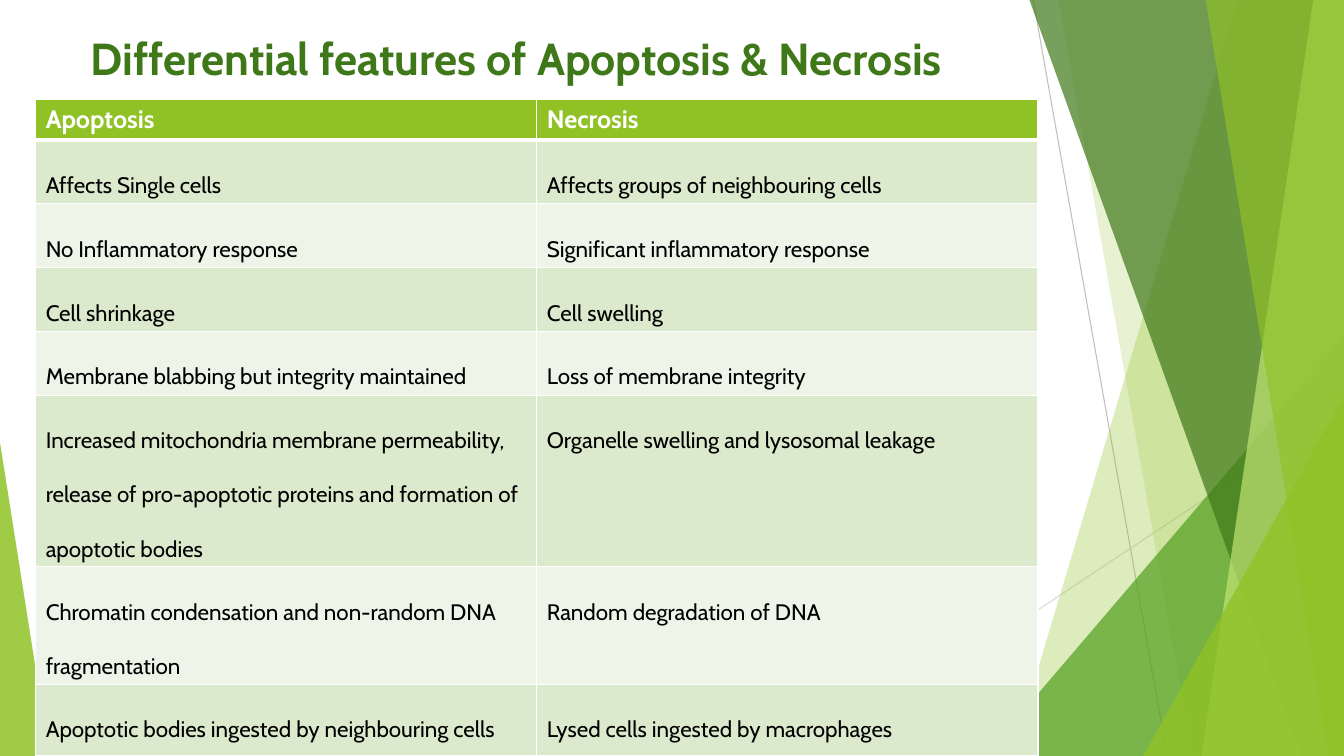
from dataclasses import dataclass

from lxml import etree
from pptx import Presentation
from pptx import util as u
from pptx.dml import color
from pptx.enum import shapes, text
from pptx.oxml import ns

FONT = "Cabin"
WIDTH, HEIGHT = u.Pt(960), u.Pt(540)
BLEED = u.Pt(-0.72)
COLORS = {
    "lime": "90C226",
    "green": "54A021",
    "forest": "3F7819",
    "pale": "C0E474",
    "white": "FFFFFF",
    "black": "000000",
    "band_dark": "DBE9CD",
    "band_light": "EEF4E8",
    "grey": "BFBFBF",
    "light_grey": "D9D9D9",
}


@dataclass
class Ray:
    """A thin straight line, in points."""
    start: tuple[float, float]
    end: tuple[float, float]
    color: str


@dataclass
class Facet:
    """A full-height pane from a slanted left edge to the right of the slide."""
    top_x: float
    bottom_x: float
    color: str
    opacity: int


@dataclass
class Wedge:
    """A triangle standing on the bottom edge of the slide."""
    left: float
    top: float
    width: float
    apex: float
    color: str
    opacity: int


@dataclass
class Row:
    """One comparison of the two kinds of cell death."""
    apoptosis: str
    necrosis: str
    height: float = 45.5


RAYS = [
    Ray((738, 0), (833.76, 540), "grey"),
    Ray((960, 290.16), (584.64, 540), "light_grey"),
]
PANES = [
    Facet(884.16, 722.88, "lime", 30),
    Facet(756, 851.76, "lime", 20),
    Wedge(703.44, 239.76, 256.56, 1, "green", 72),
    Facet(735.12, 929.52, "forest", 70),
    Facet(938.16, 858.24, "pale", 70),
    Facet(861.12, 948.96, "lime", 65),
    Wedge(816.48, 282.96, 143.52, 1, "lime", 80),
    Wedge(0, 316.08, 35.28, 0, "lime", 85),
]
ROWS = [
    Row("Apoptosis", "Necrosis", 28),
    Row("Affects Single cells", "Affects groups of neighbouring cells"),
    Row("No Inflammatory response", "Significant inflammatory response"),
    Row("Cell shrinkage", "Cell swelling"),
    Row("Membrane blabbing but integrity maintained", "Loss of membrane integrity"),
    Row(
        "Increased mitochondria membrane permeability, release of pro-apoptotic "
        "proteins and formation of apoptotic bodies",
        "Organelle swelling and lysosomal leakage",
        122.5,
    ),
    Row("Chromatin condensation and non-random DNA fragmentation", "Random degradation of DNA", 84),
    Row("Apoptotic bodies ingested by neighbouring cells", "Lysed cells ingested by macrophages", 51),
]


def rgb(name: str) -> color.RGBColor:
    """Look up a named colour."""
    return color.RGBColor.from_string(COLORS[name])


def write(frame, content: str, *, size: float, fill: str, bold: bool = False,
          align=text.PP_ALIGN.LEFT, spacing: float = 1.0) -> None:
    """Put one formatted paragraph into a text frame."""
    paragraph = frame.paragraphs[0]
    paragraph.alignment = align
    paragraph.line_spacing = spacing
    run = paragraph.add_run()
    run.text = content
    run.font.name = FONT
    run.font.size = u.Pt(size)
    run.font.bold = bold
    run.font.color.rgb = rgb(fill)


def draw_ray(slide, ray: Ray) -> None:
    """Draw a thin line without a shadow."""
    points = [u.Pt(value) for value in (*ray.start, *ray.end)]
    connector = slide.shapes.add_connector(shapes.MSO_CONNECTOR.STRAIGHT, *points)
    connector.line.color.rgb = rgb(ray.color)
    connector.line.width = u.Pt(0.75)
    etree.SubElement(connector.element.spPr, ns.qn("a:effectLst"))


def draw_pane(slide, pane: Facet | Wedge) -> None:
    """Draw a translucent facet or wedge."""
    if isinstance(pane, Facet):
        builder = slide.shapes.build_freeform(u.Pt(pane.top_x), BLEED)
        builder.add_line_segments([(WIDTH, BLEED), (WIDTH, HEIGHT), (u.Pt(pane.bottom_x), HEIGHT)])
        shape = builder.convert_to_shape()
    else:
        top = u.Pt(pane.top)
        shape = slide.shapes.add_shape(
            shapes.MSO_SHAPE.ISOSCELES_TRIANGLE, u.Pt(pane.left), top, u.Pt(pane.width), HEIGHT - top)
        shape.adjustments[0] = pane.apex
    shape.shadow.inherit = False
    shape.line.fill.background()
    shape.fill.solid()
    shape.fill.fore_color.rgb = rgb(pane.color)
    tint = shape.element.spPr.find(ns.qn("a:solidFill"))[0]
    etree.SubElement(tint, ns.qn("a:alpha"), val=str(pane.opacity * 1000))


def draw_title(slide) -> None:
    """Place and fill the title."""
    title = slide.shapes.title
    title.left, title.top, title.width, title.height = (u.Pt(value) for value in (0, 18, 738, 46))
    frame = title.text_frame
    frame.word_wrap = True
    frame.auto_size = text.MSO_AUTO_SIZE.SHAPE_TO_FIT_TEXT
    frame.vertical_anchor = text.MSO_ANCHOR.TOP
    write(frame, "Differential features of Apoptosis & Necrosis", size=32, fill="forest",
          bold=True, align=text.PP_ALIGN.CENTER)


def style_cell(cell, fill: str, bottom: float) -> None:
    """Give a cell white borders and a solid fill."""
    properties = cell._tc.get_or_add_tcPr()
    for side, width in zip("LRTB", (1, 1, 1, bottom)):
        border = etree.SubElement(properties, ns.qn(f"a:ln{side}"), w=str(u.Pt(width)))
        solid = etree.SubElement(border, ns.qn("a:solidFill"))
        etree.SubElement(solid, ns.qn("a:srgbClr"), val=COLORS["white"])
    cell.fill.solid()
    cell.fill.fore_color.rgb = rgb(fill)


def draw_table(slide) -> None:
    """Draw the comparison table."""
    height = u.Pt(sum(row.height for row in ROWS))
    table = slide.shapes.add_table(len(ROWS), 2, u.Pt(25.5), u.Pt(71), u.Pt(716), height).table
    table.horz_banding = False
    for index, row in enumerate(ROWS):
        table.rows[index].height = u.Pt(row.height)
        header = index == 0
        fill = "lime" if header else ("band_light", "band_dark")[index % 2]
        for column, content in enumerate((row.apoptosis, row.necrosis)):
            cell = table.cell(index, column)
            style_cell(cell, fill, 3 if header else 1)
            write(cell.text_frame, content, size=18 if header else 16, bold=header,
                  fill="white" if header else "black", spacing=1.0 if header else 2.0)


def main() -> None:
    """Build and save the presentation."""
    presentation = Presentation()
    presentation.slide_width, presentation.slide_height = WIDTH, HEIGHT
    slide = presentation.slides.add_slide(presentation.slide_layouts[5])
    for ray in RAYS:
        draw_ray(slide, ray)
    for pane in PANES:
        draw_pane(slide, pane)
    draw_title(slide)
    draw_table(slide)
    presentation.save("out.pptx")


if __name__ == "__main__":
    main()
